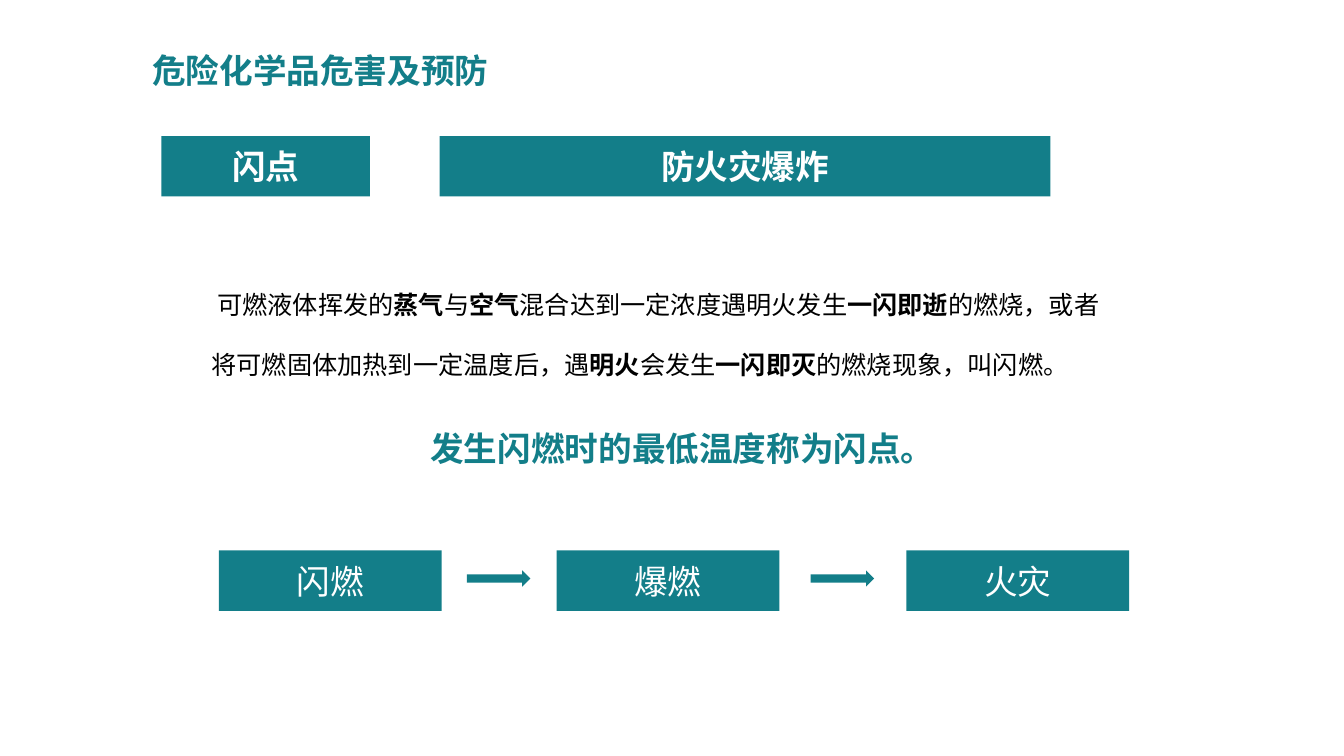
from pptx import Presentation
from pptx.dml.color import RGBColor
from pptx.enum.shapes import MSO_SHAPE
from pptx.enum.text import MSO_ANCHOR, MSO_AUTO_SIZE, PP_ALIGN
from pptx.util import Pt

RECT = MSO_SHAPE.RECTANGLE
ARROW = MSO_SHAPE.RIGHT_ARROW
TOP, MIDDLE = MSO_ANCHOR.TOP, MSO_ANCHOR.MIDDLE
LEFT, CENTER = PP_ALIGN.LEFT, PP_ALIGN.CENTER
FIXED = MSO_AUTO_SIZE.NONE
PX = 9144  # 100 px to the inch
TEAL, WHITE, BLACK = "137E89", "FFFFFF", "000000"


def write(shape, runs, size, color, align=LEFT, anchor=TOP, spacing=1, wrap=True):
    """Fill the shape's first paragraph with (text, bold) runs."""
    frame = shape.text_frame
    frame.auto_size = FIXED
    frame.word_wrap = wrap
    frame.vertical_anchor = anchor
    para = frame.paragraphs[0]
    para.alignment = align
    para.line_spacing = spacing
    for text, bold in runs:
        run = para.add_run()
        run.text = text
        font = run.font
        font.name = "Arial"
        font.size = Pt(size)
        font.bold = bold
        font.color.rgb = RGBColor.from_string(color)


def block(kind, x, y, w, h):
    """Add a teal preset shape without line or shadow."""
    shape = slide.shapes.add_shape(kind, x * PX, y * PX, w * PX, h * PX)
    shape.shadow.inherit = False
    shape.fill.solid()
    shape.fill.fore_color.rgb = RGBColor.from_string(TEAL)
    shape.line.fill.background()
    return shape


deck = Presentation()
deck.slide_width = 1333 * PX
deck.slide_height = 750 * PX
slide = deck.slides.add_slide(deck.slide_layouts[5])

title = slide.shapes.title
title.left, title.top = 141 * PX, 44 * PX
title.width, title.height = 389 * PX, 50 * PX
write(title, [("危险化学品危害及预防", True)], 24, TEAL)

# Topic bars and the three stages of a fire
boxes = [
    ("闪点", 160, 135, 207, True),
    ("防火灾爆炸", 436, 135, 606, True),
    ("闪燃", 217, 546, 221, False),
    ("爆燃", 552, 546, 221, False),
    ("火灾", 899, 546, 221, False),
]
for label, x, y, w, bold in boxes:
    box = block(RECT, x, y, w, 60)
    write(box, [(label, bold)], 24, WHITE, CENTER, MIDDLE)

for x in (463, 804):
    block(ARROW, x, 566, 63, 16)

meaning = slide.shapes.add_textbox(200 * PX, 252 * PX, 920 * PX, 131 * PX)
write(meaning, [
    (" 可燃液体挥发的", False),
    ("蒸气", True),
    ("与", False),
    ("空气", True),
    ("混合达到一定浓度遇明火发生", False),
    ("一闪即逝", True),
    ("的燃烧，或者将可燃固体加热到一定温度后，遇", False),
    ("明火", True),
    ("会发生", False),
    ("一闪即灭", True),
    ("的燃烧现象，叫闪燃。", False),
], 18, BLACK, spacing=2.0)

point = slide.shapes.add_textbox(417 * PX, 400 * PX, 525 * PX, 63 * PX)
write(point, [("发生闪燃时的最低温度称为闪点。", True)], 24, TEAL, spacing=1.5, wrap=False)

deck.save("out.pptx")
